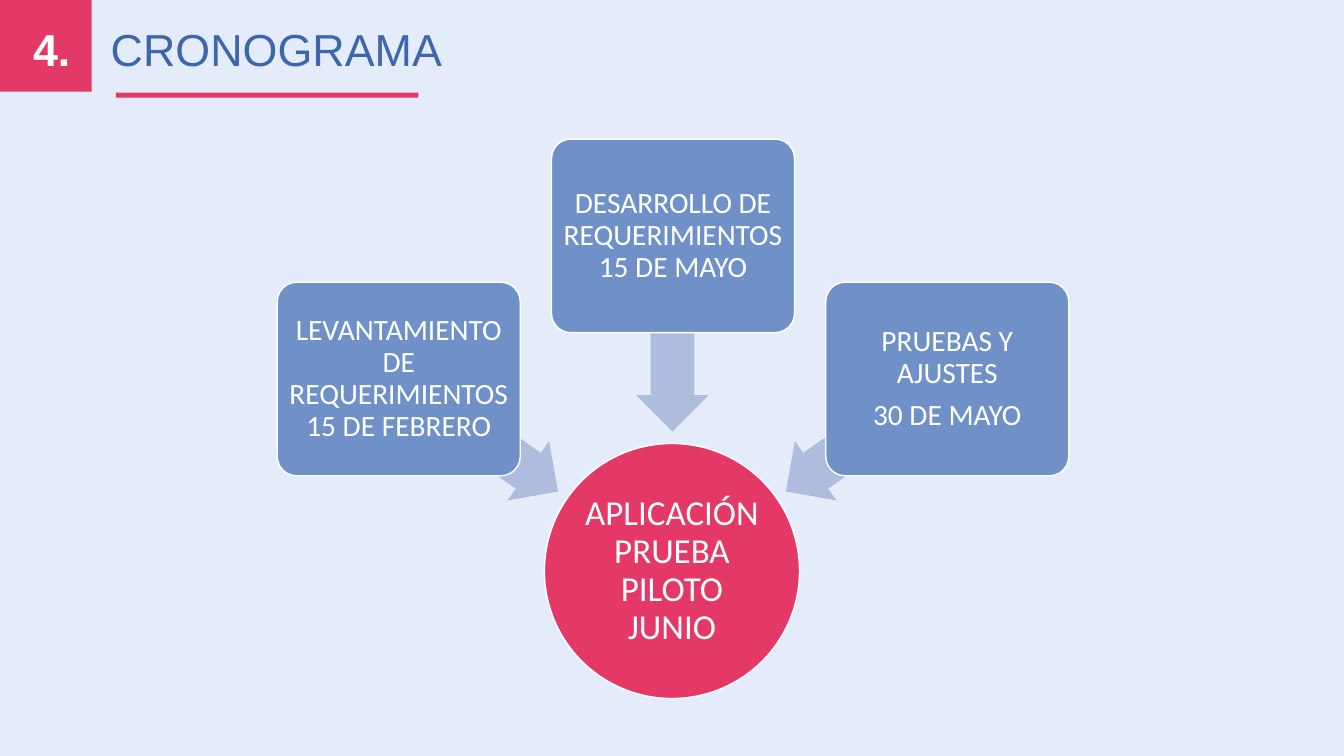
from dataclasses import dataclass

from pptx import Presentation
from pptx.dml.color import RGBColor
from pptx.enum.shapes import MSO_SHAPE
from pptx.enum.text import MSO_ANCHOR, PP_ALIGN
from pptx.util import Inches, Pt

RECT = MSO_SHAPE.RECTANGLE
ROUNDED = MSO_SHAPE.ROUNDED_RECTANGLE
OVAL = MSO_SHAPE.OVAL
LEFT_ARROW = MSO_SHAPE.LEFT_ARROW
MIDDLE = MSO_ANCHOR.MIDDLE
CENTER = PP_ALIGN.CENTER


@dataclass(frozen=True)
class Theme:
    background: str = "E3ECF8"
    accent: str = "E43866"
    title: str = "3F65AA"
    step: str = "6F91C8"
    arrow: str = "B0BCDE"
    white: str = "FFFFFF"
    heading_font: str = "Arial"
    body_font: str = "Calibri"
    heading_size: float = 32
    goal_size: float = 25
    step_size: float = 21


THEME = Theme()

# Step geometry: the three steps are spaced evenly around the centre
STEP_W, STEP_H = 2.41, 1.92
STEP_LEFT, STEP_PITCH = 2.75, 2.72
ARROW_W, ARROW_H = 1.94, 0.72

# Step text, step top, arrow centre (x, y), arrow rotation
STEPS = [
    (["LEVANTAMIENTO DE REQUERIMIENTOS 15 DE FEBRERO"], 2.8, (4.74, 4.32), 215),
    (["DESARROLLO DE REQUERIMIENTOS 15 DE MAYO"], 1.38, (6.67, 3.31), 270),
    (["PRUEBAS Y AJUSTES", "30 DE MAYO"], 2.8, (8.59, 4.32), 325),
]


def rgb(color):
    return RGBColor.from_string(color)


def style_runs(p, font, size, color, bold=False):
    for r in p.runs:
        r.font.name = font
        r.font.size = Pt(size)
        r.font.bold = bold
        r.font.color.rgb = rgb(color)


def add_block(slide, kind, x, y, w, h, fill, outlined=False):
    sp = slide.shapes.add_shape(kind, Inches(x), Inches(y), Inches(w), Inches(h))
    sp.shadow.inherit = False
    sp.fill.solid()
    sp.fill.fore_color.rgb = rgb(fill)
    if outlined:
        sp.line.color.rgb = rgb(THEME.white)
        sp.line.width = Pt(1)
    else:
        sp.line.fill.background()
    return sp


def add_heading(slide, text, x, y, w, h, color, bold=False):
    tf = slide.shapes.add_textbox(Inches(x), Inches(y), Inches(w), Inches(h)).text_frame
    tf.word_wrap = True
    tf.text = text
    style_runs(tf.paragraphs[0], THEME.heading_font, THEME.heading_size, color, bold)


def fill_text(sp, lines, size, inset):
    tf = sp.text_frame
    tf.word_wrap = True
    tf.vertical_anchor = MIDDLE
    tf.margin_left = tf.margin_right = tf.margin_top = tf.margin_bottom = Inches(inset)
    tf.text = "\n".join(lines)
    for p in tf.paragraphs:
        p.alignment = CENTER
        p.line_spacing = 0.9
        p.space_after = Pt(0.35 * size)
        style_runs(p, THEME.body_font, size, THEME.white)


def add_arrow(slide, center, rotation):
    cx, cy = center
    sp = add_block(slide, LEFT_ARROW, cx - ARROW_W / 2, cy - ARROW_H / 2,
                   ARROW_W, ARROW_H, THEME.arrow)
    sp.adjustments[0] = 0.6
    sp.adjustments[1] = 0.5
    sp.rotation = rotation


def add_step(slide, lines, x, y):
    sp = add_block(slide, ROUNDED, x, y, STEP_W, STEP_H, THEME.step, outlined=True)
    sp.adjustments[0] = 0.1
    fill_text(sp, lines, THEME.step_size, 0.04)


def main():
    prs = Presentation()
    prs.slide_width, prs.slide_height = Inches(13.33), Inches(7.5)
    slide = prs.slides.add_slide(prs.slide_layouts[6])
    slide.background.fill.solid()
    slide.background.fill.fore_color.rgb = rgb(THEME.background)

    # Header
    add_block(slide, RECT, 0, 0, 0.91, 0.91, THEME.accent)
    add_heading(slide, "4.", 0.23, 0.17, 0.63, 0.64, THEME.white, bold=True)
    add_heading(slide, "CRONOGRAMA", 1, 0.17, 11.04, 0.64, THEME.title)
    add_block(slide, RECT, 1.15, 0.92, 3, 0.05, THEME.accent)

    # Goal
    goal = add_block(slide, OVAL, 5.4, 4.4, 2.53, 2.53, THEME.accent, outlined=True)
    fill_text(goal, ["APLICACIÓN PRUEBA PILOTO JUNIO"], THEME.goal_size, 0.02)

    # Steps, each over the tail of its arrow
    for i, (lines, top, arrow_center, rotation) in enumerate(STEPS):
        add_arrow(slide, arrow_center, rotation)
        add_step(slide, lines, STEP_LEFT + i * STEP_PITCH, top)

    prs.save("out.pptx")


if __name__ == "__main__":
    main()
